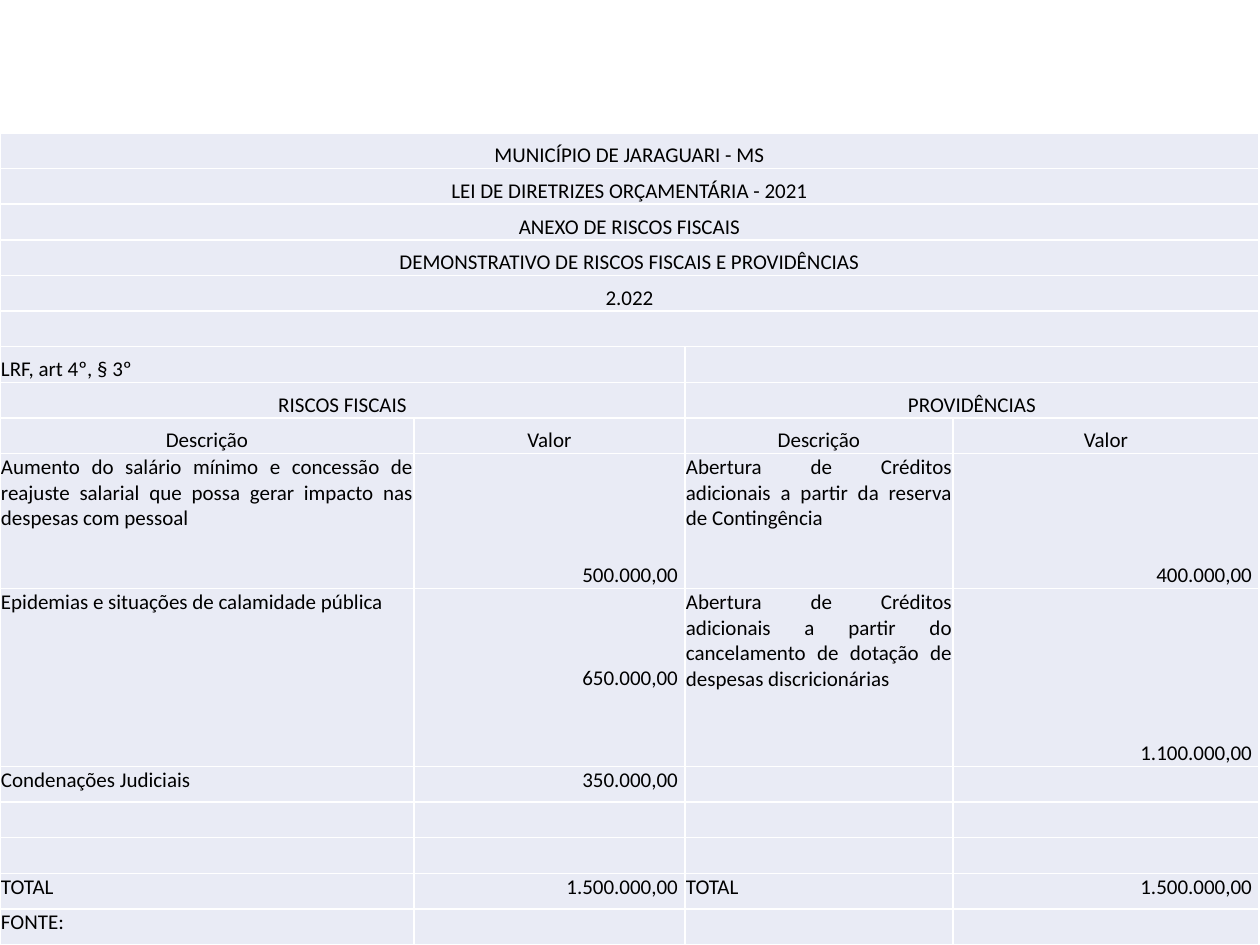
from typing import NamedTuple

from pptx import Presentation
from pptx import util as u
from pptx.dml.color import RGBColor
from pptx.enum import text
from pptx.oxml.ns import qn
from lxml import etree

EMU_PER_PX = 914400 / 126
COLUMNS = (414, 271, 268, 306)
TABLE_TOP, TABLE_HEIGHT = 133, 812
TALL_ROWS = {9: 135, 10: 178}
ROW_COUNT = 16
BODY_START = 9

CENTER, JUSTIFY, RIGHT = (
    text.PP_ALIGN.CENTER, text.PP_ALIGN.JUSTIFY, text.PP_ALIGN.RIGHT)
TOP, MIDDLE, BOTTOM = (
    text.MSO_ANCHOR.TOP, text.MSO_ANCHOR.MIDDLE, text.MSO_ANCHOR.BOTTOM)


class Entry(NamedTuple):
    words: str = ""
    align: text.PP_ALIGN = JUSTIFY
    anchor: text.MSO_ANCHOR = TOP
    span: int = 1
    right: int = 1


def px(length: float) -> u.Emu:
    return u.Emu(round(length * EMU_PER_PX))


def color(code: str) -> RGBColor:
    return RGBColor.from_string(code)


def heading(words: str, span: int = 1, align=CENTER) -> Entry:
    return Entry(words, align, BOTTOM, span)


def amount(words: str, anchor=TOP) -> Entry:
    return Entry(words, RIGHT, anchor, right=7)


def draw_borders(cell, code: str = "FFFFFF", width: float = 1) -> None:
    properties = cell._tc.get_or_add_tcPr()
    for side in ("lnL", "lnR", "lnT", "lnB"):
        line = etree.SubElement(properties, qn(f"a:{side}"), w=str(u.Pt(width)))
        fill = etree.SubElement(line, qn("a:solidFill"))
        etree.SubElement(fill, qn("a:srgbClr"), val=code)


def write(cell, words: str, *, align, anchor, right: int = 1, size: int = 12,
          font: str = "Calibri", code: str = "000000") -> None:
    cell.margin_left, cell.margin_top = px(1), px(1)
    cell.margin_right, cell.margin_bottom = px(right), 0
    cell.vertical_anchor = anchor
    paragraph = cell.text_frame.paragraphs[0]
    paragraph.alignment = align
    if words:
        run = paragraph.add_run()
        run.text = words
        run.font.size, run.font.name = u.Pt(size), font
        run.font.color.rgb = color(code)
    else:
        # Keeps an empty row from growing to the default text size
        etree.SubElement(paragraph._p, qn("a:endParaRPr"), sz=str(size * 100))


def draw_row(table, row: int, entries: list[Entry]) -> None:
    for cell in table.rows[row].cells:
        draw_borders(cell)
        cell.fill.solid()
        cell.fill.fore_color.rgb = color("E9EBF5")
    column = 0
    for entry in entries:
        cell = table.cell(row, column)
        last = column + entry.span - 1
        if entry.span > 1:
            cell.merge(table.cell(row, last))
        write(cell, entry.words, align=entry.align, anchor=entry.anchor,
              right=entry.right)
        column = last + 1


# Content: document titles, column headings, risks and measures, totals
titles = ["MUNICÍPIO DE JARAGUARI - MS", "LEI DE DIRETRIZES ORÇAMENTÁRIA - 2021",
          "ANEXO DE RISCOS FISCAIS",
          "DEMONSTRATIVO DE RISCOS FISCAIS E PROVIDÊNCIAS", "2.022", ""]
blank = Entry()
rows = [[heading(title, 4)] for title in titles] + [
    [heading("LRF, art 4º, § 3º", 2, JUSTIFY), heading("", 2)],
    [heading("RISCOS FISCAIS", 2), heading("PROVIDÊNCIAS", 2)],
    [heading("Descrição"), heading("Valor")] * 2,
    [Entry("Aumento do salário mínimo e concessão de reajuste salarial que "
           "possa gerar impacto nas despesas com pessoal"),
     amount("500.000,00", BOTTOM),
     Entry("Abertura de Créditos adicionais a partir da reserva de Contingência"),
     amount("400.000,00", BOTTOM)],
    [Entry("Epidemias e situações de calamidade pública"),
     amount("650.000,00", MIDDLE),
     Entry("Abertura de Créditos adicionais a partir do cancelamento de dotação "
           "de despesas discricionárias"),
     amount("1.100.000,00", BOTTOM)],
    [Entry("Condenações Judiciais"), amount("350.000,00"), blank, blank],
    [blank] * 4,
    [blank] * 4,
    [Entry("TOTAL"), amount("1.500.000,00")] * 2,
    [Entry("FONTE:"), blank, blank, blank],
]


def main() -> None:
    deck = Presentation()
    deck.slide_width, deck.slide_height = px(1260), px(945)
    slide = deck.slides.add_slide(deck.slide_layouts[6])

    # Fiscal risk table; the ordinary rows share the height left by the tall ones
    table = slide.shapes.add_table(
        len(rows), len(COLUMNS), 0, px(TABLE_TOP),
        px(sum(COLUMNS)), px(TABLE_HEIGHT)).table
    table.first_row = table.horz_banding = False
    plain = (TABLE_HEIGHT - sum(TALL_ROWS.values())) / (len(rows) - len(TALL_ROWS))
    for column, width in zip(table.columns, COLUMNS):
        column.width = px(width)
    for index, entries in enumerate(rows):
        table.rows[index].height = px(TALL_ROWS.get(index, plain))
        draw_row(table, index, entries)

    deck.save("out.pptx")


if __name__ == "__main__":
    main()
